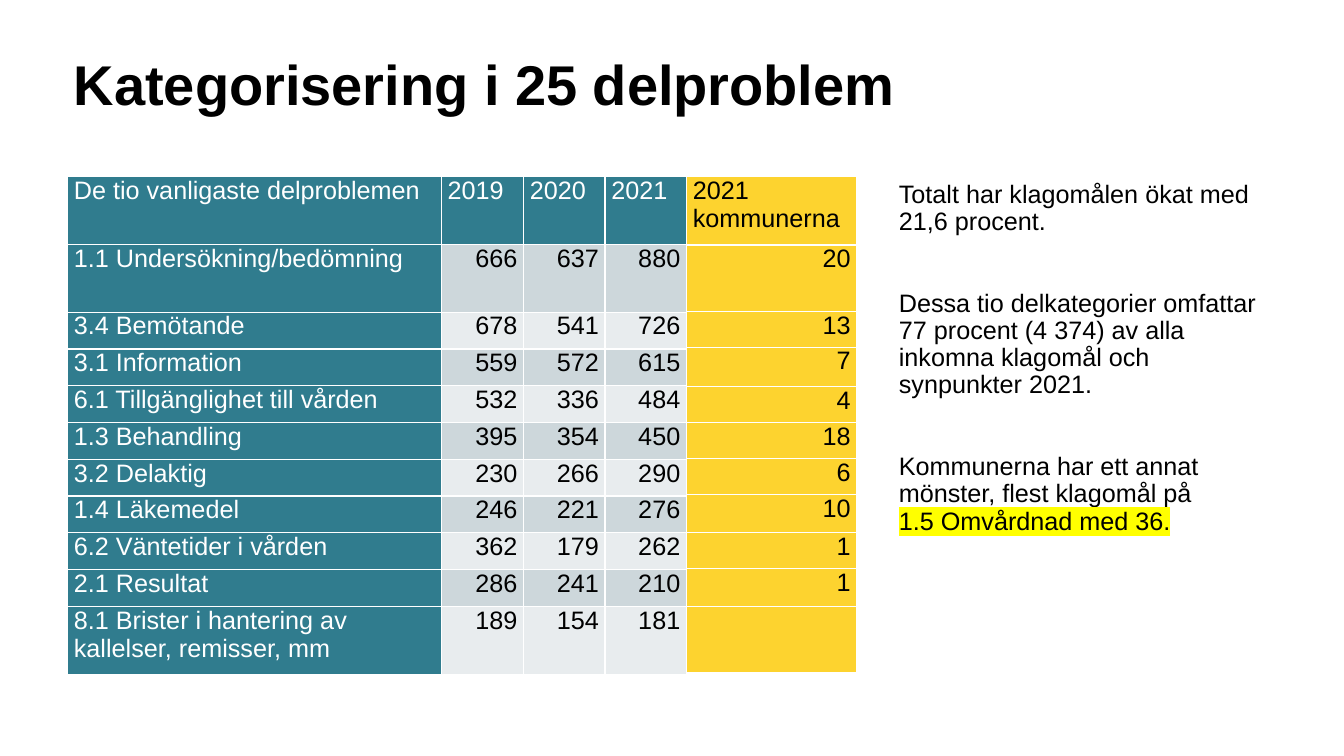
from dataclasses import dataclass

from lxml.etree import SubElement
from pptx import Presentation
from pptx.dml.color import RGBColor
from pptx.enum.text import PP_ALIGN
from pptx.oxml import parse_xml
from pptx.oxml.ns import nsdecls, qn
from pptx.util import Pt


@dataclass(frozen=True)
class Theme:
    """Colours, font and type sizes of the slide."""
    font: str = "Arial"
    head: int = 40
    body: int = 18
    black: str = "000000"
    white: str = "FFFFFF"
    teal: str = "307C8E"
    dark: str = "CDD7DB"
    light: str = "E8ECEE"
    gold: str = "FDD32F"
    mark: str = "FFFF00"


THEME = Theme()
LEFT, TOP = 48.3, 126
WIDTHS = [267, 58.7, 58.2, 58.2]
HEIGHTS = [48.5, 48.5] + [26.3] * 8 + [48.5]
ROWS = [
    ["De tio vanligaste delproblemen", "2019", "2020", "2021"],
    ["1.1 Undersökning/bedömning", "666", "637", "880"],
    ["3.4 Bemötande", "678", "541", "726"],
    ["3.1 Information", "559", "572", "615"],
    ["6.1 Tillgänglighet till vården", "532", "336", "484"],
    ["1.3 Behandling", "395", "354", "450"],
    ["3.2 Delaktig", "230", "266", "290"],
    ["1.4 Läkemedel", "246", "221", "276"],
    ["6.2 Väntetider i vården", "362", "179", "262"],
    ["2.1 Resultat", "286", "241", "210"],
    ["8.1 Brister i hantering av kallelser, remisser, mm", "189", "154", "181"],
]
TOWN_HEIGHTS = [49, 47.3, 25.7, 28, 25.8, 25.8, 25.8, 27.2, 25.8, 27.2, 47.3]
TOWNS = [[text] for text in
         ["2021 kommunerna", "20", "13", "7", "4", "18", "6", "10", "1", "1", ""]]
NOTES = [
    "Totalt har klagomålen ökat med\v21,6 procent.",
    "Dessa tio delkategorier omfattar\v77 procent (4 374) av alla inkomna "
    "klagomål och synpunkter 2021.",
    "Kommunerna har ett annat mönster, flest klagomål på\v1.5 Omvårdnad med 36.",
]


def style(para, size, color, bold=False):
    """Set the font of every run in a paragraph."""
    for run in para.runs:
        font = run.font
        font.name, font.size, font.bold = THEME.font, Pt(size), bold
        font.color.rgb = RGBColor.from_string(color)


def inset(frame, side, top):
    """Set the margins of a text frame or cell."""
    frame.margin_left = frame.margin_right = Pt(side)
    frame.margin_top = frame.margin_bottom = Pt(top)


def border(cell, color):
    """Draw a one-point line on all four sides of a cell."""
    props = cell._tc.get_or_add_tcPr()
    for index, side in enumerate(("lnL", "lnR", "lnT", "lnB")):
        props.insert(index, parse_xml(
            f'<a:{side} {nsdecls("a")} w="{Pt(1)}"><a:solidFill>'
            f'<a:srgbClr val="{color}"/></a:solidFill></a:{side}>'))


def add_cell(cell, text, fill, color, right):
    """Fill one cell with text and colour."""
    cell.text = text
    inset(cell, 4.5, 0)
    cell.fill.solid()
    cell.fill.fore_color.rgb = RGBColor.from_string(fill)
    para = cell.text_frame.paragraphs[0]
    para.font.size = Pt(THEME.body)
    para.alignment = PP_ALIGN.RIGHT if right else PP_ALIGN.LEFT
    style(para, THEME.body, color)
    border(cell, THEME.white)


def add_grid(slide, left, rows, widths, heights, paint):
    """Add a table whose cell colours come from the paint rule."""
    grid = slide.shapes.add_table(
        len(rows), len(widths), Pt(left), Pt(TOP),
        Pt(sum(widths)), Pt(sum(heights))).table
    for col, width in zip(grid.columns, widths):
        col.width = Pt(width)
    for row, height in zip(grid.rows, heights):
        row.height = Pt(height)
    for y, row in enumerate(rows):
        for x, text in enumerate(row):
            fill, color = paint(y, x)
            right = y > 0 and (x > 0 or len(widths) == 1)
            add_cell(grid.cell(y, x), text, fill, color, right)


def paint_main(y, x):
    """Give teal to the labels and bands to the numbers."""
    if y == 0 or x == 0:
        return THEME.teal, THEME.white
    return (THEME.dark if y % 2 else THEME.light), THEME.black


def paint_town(y, x):
    """Give gold to every cell."""
    return THEME.gold, THEME.black


def add_box(slide, left, top, width, height, side, pad):
    """Add a wrapping text box and return its frame."""
    frame = slide.shapes.add_textbox(
        Pt(left), Pt(top), Pt(width), Pt(height)).text_frame
    frame.word_wrap = True
    inset(frame, side, pad)
    return frame


def add_title(slide, text):
    """Add the heading."""
    frame = add_box(slide, LEFT, 21.6, 864, 90, 4.5, 9)
    frame.text = text
    para = frame.paragraphs[0]
    para.line_spacing = 1.1
    style(para, THEME.head, THEME.black, True)


def add_notes(slide, texts):
    """Add the remarks and mark the last line."""
    frame = add_box(slide, 635, TOP, 276.5, 356.4, 7.2, 3.6)
    frame.text = "\n".join(texts)
    for index, para in enumerate(frame.paragraphs):
        para.line_spacing = 0.9
        if index:
            para.space_before = Pt(39)
        style(para, THEME.body, THEME.black)
    props = para.runs[-1].font._element
    mark = SubElement(props, qn("a:highlight"))
    SubElement(mark, qn("a:srgbClr")).set("val", THEME.mark)
    props.find(qn("a:solidFill")).addnext(mark)


def main():
    """Build and save the slide."""
    deck = Presentation()
    deck.slide_width, deck.slide_height = Pt(960), Pt(540)
    slide = deck.slides.add_slide(deck.slide_layouts[6])
    add_title(slide, "Kategorisering i 25 delproblem")
    add_notes(slide, NOTES)
    add_grid(slide, LEFT, ROWS, WIDTHS, HEIGHTS, paint_main)
    add_grid(slide, LEFT + sum(WIDTHS), TOWNS, [121.7], TOWN_HEIGHTS, paint_town)
    deck.save("out.pptx")


if __name__ == "__main__":
    main()
